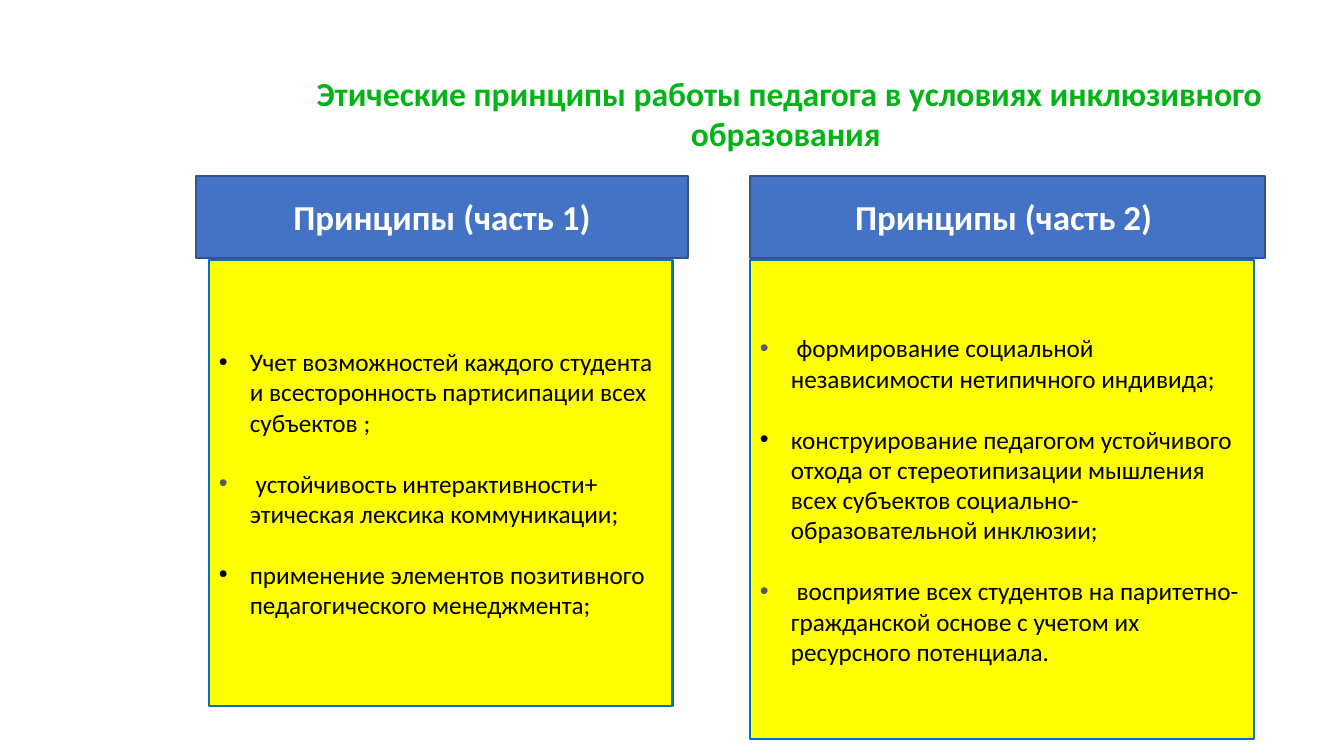
import lxml.etree
import pptx
import pptx.dml.color
import pptx.enum.shapes
import pptx.enum.text
import pptx.oxml.ns
import pptx.util

SCALE = 914400 / 100.8
FONT = "Calibri"
COLORS = {
    "title": "00B415",
    "head": "4472C4",
    "edge": "325491",
    "body": "FFFF00",
    "frame": "0071BC",
    "white": "FFFFFF",
    "black": "000000",
    "gray": "595959",
}
TITLE = "Этические принципы работы педагога в условиях инклюзивного образования "

# Each item: bullet colour, text
FIRST = [
    ("black", "Учет возможностей каждого студента и всесторонность партисипации всех субъектов ;"),
    ("gray", " устойчивость интерактивности+ этическая лексика коммуникации;"),
    ("black", "применение элементов позитивного педагогического менеджмента;"),
]
SECOND = [
    ("gray", " формирование социальной независимости нетипичного индивида;"),
    ("black", "конструирование педагогом устойчивого отхода от стереотипизации мышления "
              "всех субъектов социально-образовательной инклюзии;"),
    ("gray", " восприятие всех студентов на паритетно-гражданской основе с учетом их "
             "ресурсного потенциала."),
]


def px(num):
    return pptx.util.Emu(round(num * SCALE))


def color(name):
    return pptx.dml.color.RGBColor.from_string(COLORS[name])


def style(para, size, tint, bold=False):
    para.line_spacing = 1.0
    for run in para.runs:
        run.font.name = FONT
        run.font.size = pptx.util.Pt(size)
        run.font.bold = bold
        run.font.color.rgb = color(tint)


def center(para):
    para.alignment = pptx.enum.text.PP_ALIGN.CENTER


def add_title(slide):
    title = slide.shapes.title
    title.left, title.top, title.width, title.height = map(px, (235, 68, 1109, 92))
    frame = title.text_frame
    frame.text = TITLE
    frame.word_wrap = True
    frame.auto_size = pptx.enum.text.MSO_AUTO_SIZE.NONE
    frame.vertical_anchor = pptx.enum.text.MSO_ANCHOR.TOP
    center(frame.paragraphs[0])
    style(frame.paragraphs[0], 24, "title", True)


def add_box(slide, area, fill, line, width):
    box = slide.shapes.add_shape(pptx.enum.shapes.MSO_SHAPE.RECTANGLE, *map(px, area))
    box.shadow.inherit = False
    box.fill.solid()
    box.fill.fore_color.rgb = color(fill)
    box.line.color.rgb = color(line)
    box.line.width = pptx.util.Pt(width)
    box.text_frame.word_wrap = True
    box.text_frame.vertical_anchor = pptx.enum.text.MSO_ANCHOR.MIDDLE
    return box.text_frame


def add_head(slide, area, text):
    frame = add_box(slide, area, "head", "edge", 1)
    frame.text = text
    center(frame.paragraphs[0])
    style(frame.paragraphs[0], 25, "white", True)


def add_bullet(para, tint):
    props = para._p.get_or_add_pPr()
    props.set("marL", str(px(31)))
    props.set("indent", str(-px(31)))
    tag = pptx.oxml.ns.qn
    paint = lxml.etree.SubElement(props, tag("a:buClr"))
    lxml.etree.SubElement(paint, tag("a:srgbClr"), val=COLORS[tint])
    lxml.etree.SubElement(props, tag("a:buFont"), typeface="Arial")
    lxml.etree.SubElement(props, tag("a:buChar"), char="•")


def add_list(slide, area, items):
    frame = add_box(slide, area, "body", "frame", 2)
    frame.text = "\n".join(text for _, text in items)
    for row, (para, (tint, _)) in enumerate(zip(frame.paragraphs, items)):
        para.alignment = pptx.enum.text.PP_ALIGN.LEFT
        style(para, 18, "black")
        para.space_before = pptx.util.Pt(22 if row else 0)
        add_bullet(para, tint)


def main():
    deck = pptx.Presentation()
    deck.slide_width, deck.slide_height = px(1344), px(756)
    slide = deck.slides.add_slide(deck.slide_layouts[5])
    add_title(slide)
    add_list(slide, (209, 260, 464, 446), FIRST)
    add_head(slide, (196, 176, 492, 82), "Принципы (часть 1)")
    add_list(slide, (750, 260, 504, 479), SECOND)
    add_head(slide, (750, 176, 515, 82), "Принципы (часть 2) ")
    deck.save("out.pptx")


if __name__ == "__main__":
    main()
